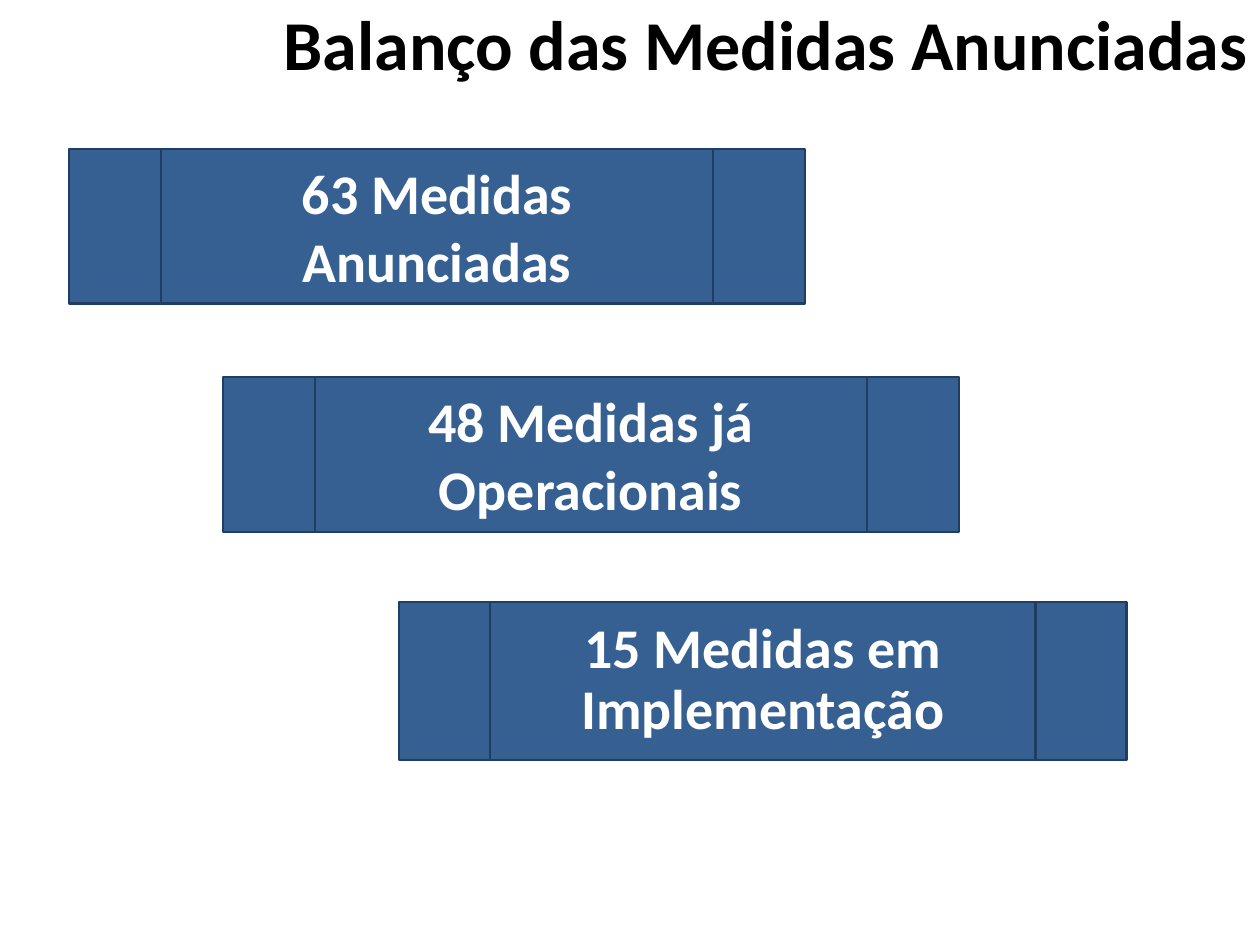
import dataclasses

import pptx
import pptx.dml.color
import pptx.enum.shapes
import pptx.enum.text
import pptx.slide
import pptx.util

Inches = pptx.util.Inches
Pt = pptx.util.Pt
RGBColor = pptx.dml.color.RGBColor
Align = pptx.enum.text.PP_ALIGN
Anchor = pptx.enum.text.MSO_ANCHOR


@dataclasses.dataclass(frozen=True)
class Theme:
    font: str = "Calibri"
    title_size: int = 40
    box_size: int = 32
    title: str = "000000"
    box_text: str = "FFFFFF"
    fill: str = "376092"
    line: str = "203E63"


@dataclasses.dataclass(frozen=True)
class Box:
    text: str
    left: float
    top: float
    width: float = 5.84
    height: float = 1.23
    spacing: float = 1.0


THEME = Theme()
BOXES = [
    Box("63 Medidas Anunciadas", 0.55, 1.18),
    Box("48 Medidas já Operacionais", 1.77, 2.99),
    Box("15 Medidas em Implementação", 3.17, 4.78, 5.77, 1.25, 0.9),
]


def write(tf, text: str, size: int, color: str, align, spacing: float) -> None:
    tf.word_wrap = True
    tf.text = text
    p = tf.paragraphs[0]
    p.alignment = align
    p.line_spacing = spacing
    p.font.name = THEME.font
    p.font.size = Pt(size)
    p.font.bold = True
    p.font.color.rgb = RGBColor.from_string(color)


def add_title(s: pptx.slide.Slide, text: str) -> None:
    sp = s.shapes.title
    sp.left, sp.top = Inches(0), Inches(0.03)
    sp.width, sp.height = Inches(10), Inches(0.84)
    tf = sp.text_frame
    tf.auto_size = pptx.enum.text.MSO_AUTO_SIZE.NONE
    tf.vertical_anchor = Anchor.TOP
    write(tf, text, THEME.title_size, THEME.title, Align.RIGHT, 0.9)


def add_box(s: pptx.slide.Slide, box: Box) -> None:
    sp = s.shapes.add_shape(
        pptx.enum.shapes.MSO_SHAPE.FLOWCHART_PREDEFINED_PROCESS,
        Inches(box.left), Inches(box.top), Inches(box.width), Inches(box.height),
    )
    sp.shadow.inherit = False
    sp.fill.solid()
    sp.fill.fore_color.rgb = RGBColor.from_string(THEME.fill)
    sp.line.color.rgb = RGBColor.from_string(THEME.line)
    sp.line.width = Pt(1.25)
    tf = sp.text_frame
    tf.vertical_anchor = Anchor.MIDDLE
    write(tf, box.text, THEME.box_size, THEME.box_text, Align.CENTER, box.spacing)


def main() -> None:
    prs = pptx.Presentation()
    prs.slide_width, prs.slide_height = Inches(10), Inches(7.5)
    s = prs.slides.add_slide(prs.slide_layouts.get_by_name("Title Only"))
    add_title(s, "Balanço das Medidas Anunciadas")
    for box in BOXES:
        add_box(s, box)
    prs.save("out.pptx")


if __name__ == "__main__":
    main()
